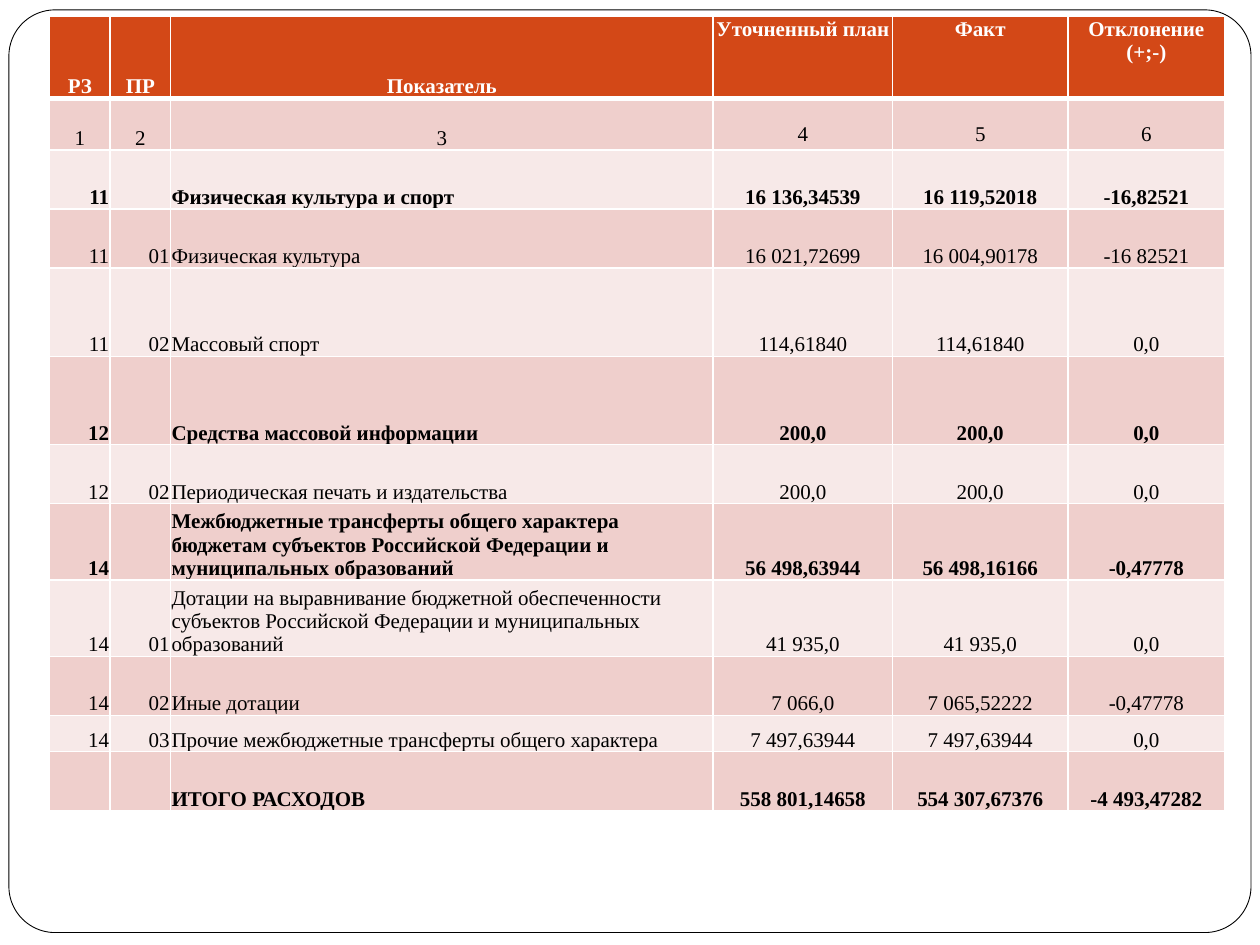
from dataclasses import dataclass

from lxml.etree import SubElement
from pptx import Presentation
from pptx.dml.color import RGBColor as Color
from pptx.enum.shapes import MSO_SHAPE as Shape
from pptx.enum.text import MSO_ANCHOR as Anchor, PP_ALIGN as Align
from pptx.oxml.ns import qn
from pptx.util import Cm, Pt


@dataclass(frozen=True)
class Theme:
    """Colours, type and line widths of the slide."""
    font: str = "Times New Roman"
    size: int = 12
    white: str = "FFFFFF"
    black: str = "000000"
    header: str = "D34817"
    bands: tuple = ("F7E9E8", "EFCFCC")
    frame_line: float = 0.5
    grid_line: int = 1
    header_line: int = 3


THEME = Theme()
COLUMN_WIDTHS = (1.22, 1.22, 10.94, 3.62, 3.53, 3.17)
ROW_HEIGHTS = (1.65, 1.04, 1.19, 1.19, 1.78, 1.78, 1.19, 1.54, 1.54, 1.19, 0.73, 1.19)
COLUMN_ALIGNS = (Align.RIGHT, Align.RIGHT, Align.LEFT, Align.CENTER, Align.CENTER, Align.CENTER)
FIRST_VALUE_COLUMN = 3
HEADER_ROW, NUMBER_ROW = 0, 1
BUDGET_ROWS = (
    ("РЗ", "ПР", "Показатель", "Уточненный план", "Факт", "Отклонение (+;-)"),
    ("1", "2", "3", "4", "5", "6"),
    ("11", "", "Физическая культура и спорт", "16 136,34539", "16 119,52018", "-16,82521"),
    ("11", "01", "Физическая культура", "16 021,72699", "16 004,90178", "-16 82521"),
    ("11", "02", "Массовый спорт", "114,61840", "114,61840", "0,0"),
    ("12", "", "Средства массовой информации", "200,0", "200,0", "0,0"),
    ("12", "02", "Периодическая печать и издательства", "200,0", "200,0", "0,0"),
    ("14", "", "Межбюджетные трансферты общего характера бюджетам субъектов "
     "Российской Федерации и муниципальных образований",
     "56 498,63944", "56 498,16166", "-0,47778"),
    ("14", "01", "Дотации на выравнивание бюджетной обеспеченности субъектов "
     "Российской Федерации и муниципальных образований", "41 935,0", "41 935,0", "0,0"),
    ("14", "02", "Иные дотации", "7 066,0", "7 065,52222", "-0,47778"),
    ("14", "03", "Прочие межбюджетные трансферты общего характера",
     "7 497,63944", "7 497,63944", "0,0"),
    ("", "", "ИТОГО РАСХОДОВ", "558 801,14658", "554 307,67376", "-4 493,47282"),
)


def add_frame(page, left, top, width, height):
    """Draw the rounded frame in the given box."""
    frame = page.shapes.add_shape(Shape.ROUNDED_RECTANGLE, left, top, width, height)
    frame.adjustments[0] = 0.05
    frame.shadow.inherit = False
    frame.fill.solid()
    frame.fill.fore_color.rgb = Color.from_string(THEME.white)
    frame.line.color.rgb = Color.from_string(THEME.black)
    frame.line.width = Pt(THEME.frame_line)


def set_borders(cell, row):
    """Give a cell white borders, heavier below the header."""
    heavy = {HEADER_ROW: "lnB", NUMBER_ROW: "lnT"}.get(row)
    properties = cell._tc.get_or_add_tcPr()
    for side in ("lnL", "lnR", "lnT", "lnB"):
        width = THEME.header_line if side == heavy else THEME.grid_line
        line = SubElement(properties, qn(f"a:{side}"), w=str(Pt(width)))
        fill = SubElement(line, qn("a:solidFill"))
        SubElement(fill, qn("a:srgbClr"), val=THEME.white)


def format_cell(cell, row, column):
    """Set the borders, fill, insets and anchor of a cell."""
    set_borders(cell, row)
    fill = THEME.header if row == HEADER_ROW else THEME.bands[row % 2]
    cell.fill.solid()
    cell.fill.fore_color.rgb = Color.from_string(fill)
    cell.margin_left = cell.margin_right = cell.margin_top = Cm(0.02)
    cell.margin_bottom = Cm(0)
    from_top = row <= NUMBER_ROW and column >= FIRST_VALUE_COLUMN
    cell.vertical_anchor = Anchor.TOP if from_top else Anchor.BOTTOM
    if from_top and row == NUMBER_ROW:
        cell.margin_top = Cm(0.5)


def write_cell(cell, text, align, color, bold):
    """Write one run of text in a cell."""
    para = cell.text_frame.paragraphs[0]
    para.alignment = align
    para.font.size = Pt(THEME.size)
    if text:
        span = para.add_run()
        span.text = text
        span.font.name = THEME.font
        span.font.size = Pt(THEME.size)
        span.font.bold = bold
        span.font.color.rgb = Color.from_string(color)


def add_budget_table(page, left, top, width, height):
    """Place the budget table in the given box."""
    table = page.shapes.add_table(
        len(BUDGET_ROWS), len(COLUMN_WIDTHS), left, top, width, height).table
    for column, share in zip(table.columns, COLUMN_WIDTHS):
        column.width = int(width * share / sum(COLUMN_WIDTHS))
    for row, share in zip(table.rows, ROW_HEIGHTS):
        row.height = int(height * share / sum(ROW_HEIGHTS))
    for row, texts in enumerate(BUDGET_ROWS):
        color = THEME.white if row == HEADER_ROW else THEME.black
        bold = row == HEADER_ROW or not texts[1]
        for column, text in enumerate(texts):
            cell = table.cell(row, column)
            align = Align.CENTER if row <= NUMBER_ROW else COLUMN_ALIGNS[column]
            format_cell(cell, row, column)
            write_cell(cell, text, align, color, bold)


def main():
    """Build and save the deck."""
    deck = Presentation()
    deck.slide_width, deck.slide_height = Cm(25.4), Cm(19.05)
    page = deck.slides.add_slide(deck.slide_layouts[6])
    add_frame(page, Cm(0.18), Cm(0.2), Cm(25.04), Cm(18.6))
    add_budget_table(page, Cm(1), Cm(0.33), Cm(23.7), Cm(16.02))
    deck.save("out.pptx")


if __name__ == "__main__":
    main()
